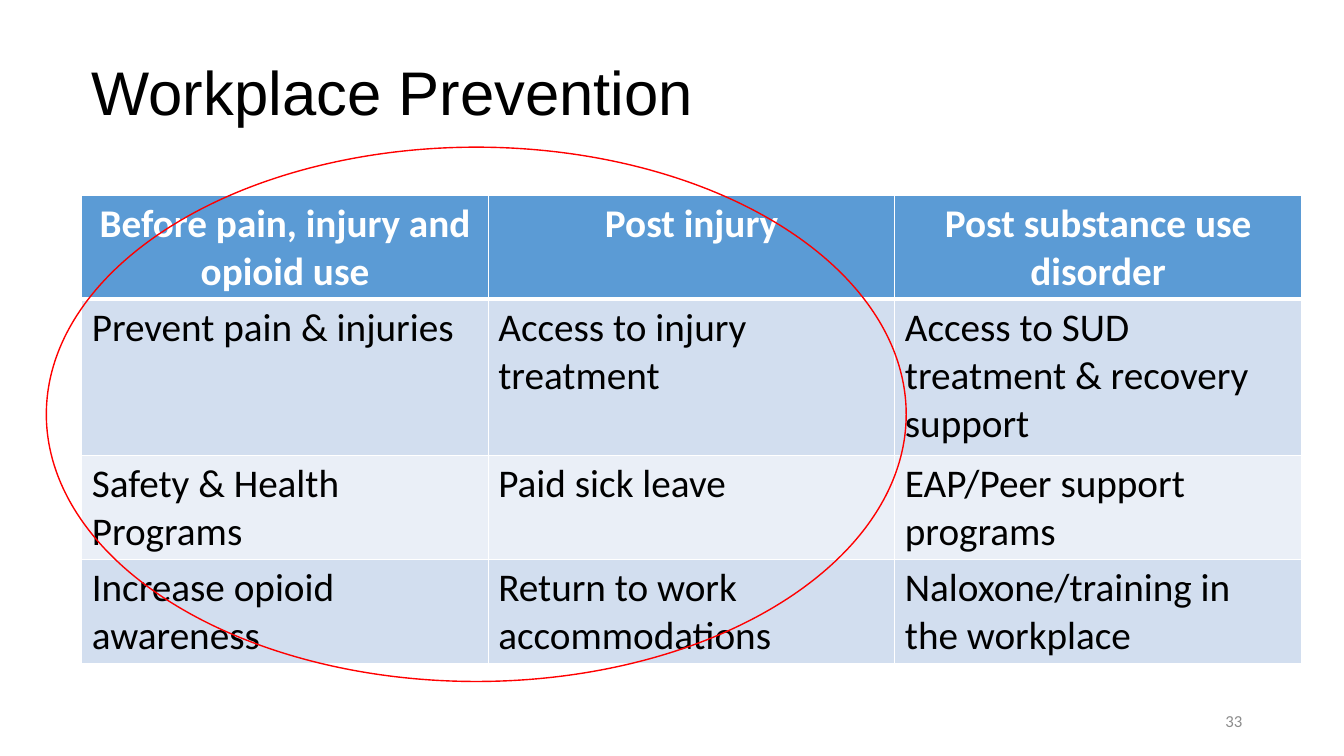
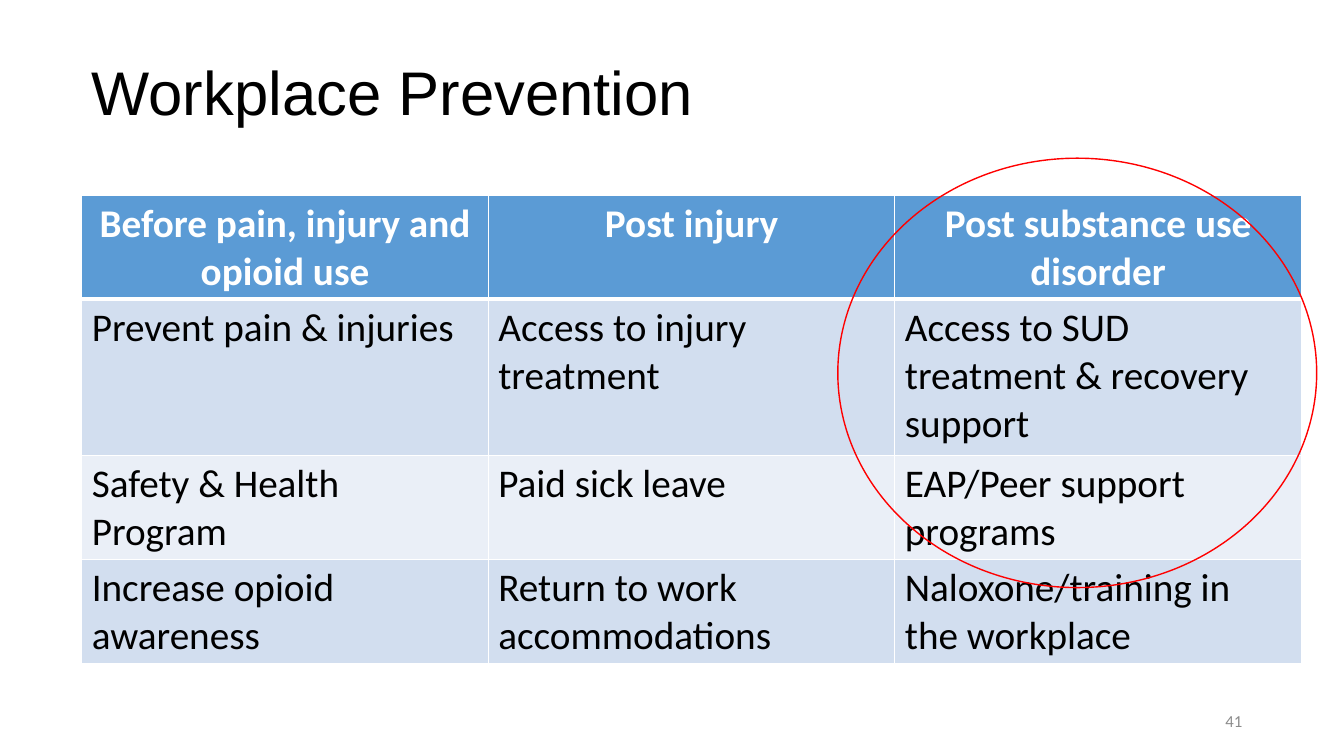
from lxml.etree import SubElement
from pptx import Presentation
from pptx.dml.color import RGBColor
from pptx.enum.shapes import MSO_SHAPE as Shape
from pptx.enum.text import MSO_ANCHOR as Anchor, PP_ALIGN as Align
from pptx.oxml.ns import qn
from pptx.util import Inches, Pt

BLACK = RGBColor(0x00, 0x00, 0x00)
WHITE = RGBColor(0xFF, 0xFF, 0xFF)
GRAY = RGBColor(0x8C, 0x8C, 0x8C)
RED = RGBColor(0xFF, 0x00, 0x00)
BLUE = RGBColor(0x5B, 0x9B, 0xD5)
BANDS = (RGBColor(0xEA, 0xEF, 0xF7), RGBColor(0xD2, 0xDE, 0xEF))

TITLE = {"name": "Arial", "size": Pt(44), "color": BLACK}
NUMBER = {"name": "Calibri", "size": Pt(12), "color": GRAY}
HEADER = {"name": "Calibri", "size": Pt(28), "color": WHITE, "bold": True}
BODY = HEADER | {"color": BLACK, "bold": False}

# Places are left, top, width, height on a grid of 100 columns by 100 rows.
GRID = 100
TITLE_PLACE = (6.08, 6.53, 48.4, 11.2)
NUMBER_PLACE = (70.67, 92.67, 22.5, 5.33)
TABLE_CORNER = (6.08, 25.87)
COLUMN_WIDTH = 30.25
ROW_HEIGHTS = (13.73, 20.67, 13.73, 13.73)
CELL_MARGINS = {"margin_top": Inches(0.05), "margin_bottom": Inches(0.03)}

STAGES = ("Before pain, injury and opioid use", "Post injury",
          "Post substance use disorder")


def measures(safety):
    """Return the table rows with the given wording of the safety measure."""
    return (
        STAGES,
        ("Prevent pain & injuries", "Access to injury treatment",
         "Access to SUD treatment & recovery support"),
        (safety, "Paid sick leave", "EAP/Peer support programs"),
        ("Increase opioid awareness", "Return to work accommodations",
         "Naloxone/training in the workplace"),
    )


class SlideBuilder:
    def __init__(self, deck):
        self.deck = deck
        self.slide = None

    def new_slide(self):
        self.slide = self.deck.slides.add_slide(self.deck.slide_layouts[6])

    def across(self, columns):
        return round(self.deck.slide_width * columns / GRID)

    def down(self, rows):
        return round(self.deck.slide_height * rows / GRID)

    def place(self, left, top, width, height):
        return (self.across(left), self.down(top),
                self.across(width), self.down(height))

    def fill_frame(self, frame, text, style, align=Align.LEFT):
        para = frame.paragraphs[0]
        para.alignment = align
        span = para.add_run()
        span.text = text
        for name, value in style.items():
            if name == "color":
                span.font.color.rgb = value
            else:
                setattr(span.font, name, value)

    def text(self, text, place, style, align=Align.LEFT, anchor=Anchor.TOP, wrap=True):
        frame = self.slide.shapes.add_textbox(*self.place(*place)).text_frame
        frame.word_wrap = wrap
        frame.vertical_anchor = anchor
        self.fill_frame(frame, text, style, align)

    def title(self, text):
        self.text(text, TITLE_PLACE, TITLE, wrap=False)

    def number(self, number):
        self.text(str(number), NUMBER_PLACE, NUMBER, Align.RIGHT, Anchor.MIDDLE)

    def borders(self, cell, row):
        """Draw white cell edges, with a thick one under the header row."""
        widths = {"L": 1, "R": 1, "T": 3 if row == 1 else 1, "B": 3 if row == 0 else 1}
        properties = cell._tc.get_or_add_tcPr()
        for side, width in widths.items():
            edge = SubElement(properties, qn(f"a:ln{side}"), w=str(Pt(width)))
            fill = SubElement(edge, qn("a:solidFill"))
            SubElement(fill, qn("a:srgbClr"), val=str(WHITE))

    def table(self, rows):
        place = (*TABLE_CORNER, COLUMN_WIDTH * len(STAGES), sum(ROW_HEIGHTS))
        table = self.slide.shapes.add_table(
            len(rows), len(STAGES), *self.place(*place)).table
        table.horz_banding = False
        for column in table.columns:
            column.width = self.across(COLUMN_WIDTH)
        for row, texts in enumerate(rows):
            table.rows[row].height = self.down(ROW_HEIGHTS[row])
            for column, text in enumerate(texts):
                cell = table.cell(row, column)
                for name, value in CELL_MARGINS.items():
                    setattr(cell, name, value)
                self.borders(cell, row)
                cell.fill.solid()
                cell.fill.fore_color.rgb = BANDS[row % 2] if row else BLUE
                self.fill_frame(cell.text_frame, text, BODY if row else HEADER,
                                Align.LEFT if row else Align.CENTER)

    def ring(self, place):
        ring = self.slide.shapes.add_shape(Shape.OVAL, *self.place(*place))
        ring.shadow.inherit = False
        ring.fill.background()
        ring.line.color.rgb = RED
        ring.line.width = Pt(1)


def main():
    deck = Presentation()
    deck.slide_width, deck.slide_height = Inches(13.33), Inches(7.5)
    builder = SlideBuilder(deck)
    slides = (
        (33, "Safety & Health Programs", (3.45, 19.47, 63.98, 70.67)),
        (41, "Safety & Health Program", (62.34, 20.93, 35.63, 56.8)),
    )
    for number, safety, ring_place in slides:
        builder.new_slide()
        builder.number(number)
        builder.title("Workplace Prevention")
        builder.table(measures(safety))
        builder.ring(ring_place)
    deck.save("out.pptx")


if __name__ == "__main__":
    main()
